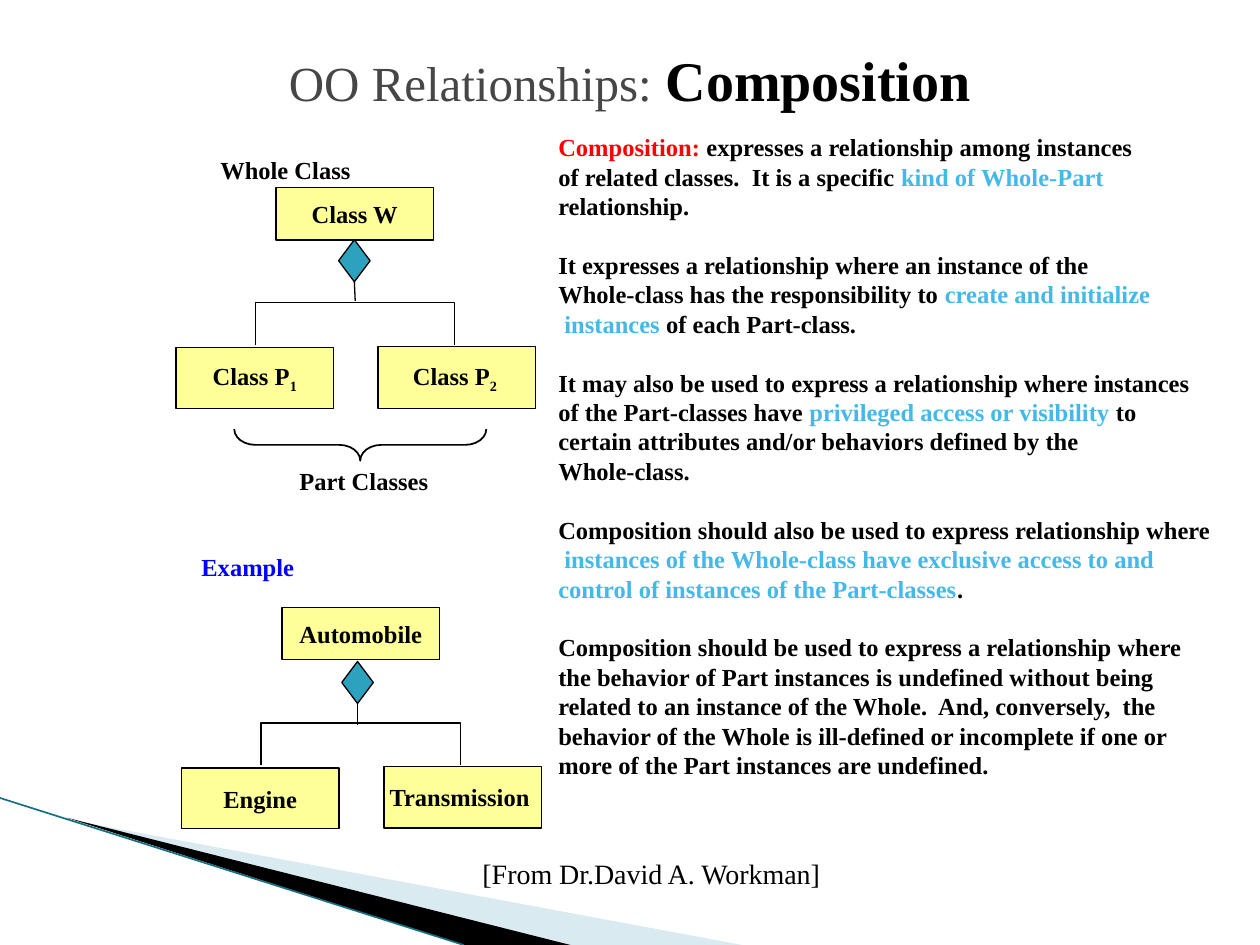
from lxml import etree
from pptx import Presentation
from pptx.dml.color import RGBColor
from pptx.enum.shapes import MSO_CONNECTOR, MSO_SHAPE
from pptx.enum.text import MSO_ANCHOR, MSO_AUTO_SIZE, PP_ALIGN
from pptx.oxml.ns import qn
from pptx.util import Pt

RECT, DIAMOND, BRACE = MSO_SHAPE.RECTANGLE, MSO_SHAPE.DIAMOND, MSO_SHAPE.LEFT_BRACE
STRAIGHT = MSO_CONNECTOR.STRAIGHT
LEFT, CENTER = PP_ALIGN.LEFT, PP_ALIGN.CENTER
TOP, MIDDLE = MSO_ANCHOR.TOP, MSO_ANCHOR.MIDDLE
NO_FIT = MSO_AUTO_SIZE.NONE

FONT = "Times New Roman"
BLACK, GREY, RED, BLUE, SKY = "000000", "464646", "FF0000", "0000FF", "44B9E8"
YELLOW, TEAL, PALE, EDGE = "FFFF99", "2DA2BF", "A0CBDC", "186F84"
BOLD = {"size": 14, "bold": True}

TITLE = [
    ("OO Relationships:", {"size": 28, "color": GREY}),
    (" ", {"size": 32, "color": GREY}),
    ("Composition", {"size": 32, "bold": True}),
]
BODY = [
    [("Composition: ", RED),
     ("expresses a relationship among instances\nof related classes.  It is a specific ", BLACK),
     ("kind of Whole-Part\n", SKY), ("relationship.", BLACK)],
    [("It expresses a relationship where an instance of the\n"
      "Whole-class has the responsibility to ", BLACK),
     ("create and initialize\n instances", SKY), (" of each Part-class.", BLACK)],
    [("It may also be used to express a relationship where instances\n"
      "of the Part-classes have ", BLACK),
     ("privileged access or visibility", SKY),
     (" to\ncertain attributes and/or behaviors defined by the\nWhole-class.", BLACK)],
    [("Composition should also be used to express relationship where\n ", BLACK),
     ("instances of the Whole-class have exclusive access to and\n"
      "control of instances of the Part-classes", SKY), (".", BLACK)],
    [("Composition should be used to express a relationship where\n"
      "the behavior of Part instances is undefined without being\n"
      "related to an instance of the Whole.  And, conversely,  the\n"
      "behavior of the Whole is ill-defined or incomplete if one or\n"
      "more of the Part instances are undefined.", BLACK)],
]
DIAGRAMS = [
    {"boxes": [("Class W", "", (157.7, 107.2, 90, 30)),
               ("Class P", "1", (100.6, 198.7, 90, 34.6)),
               ("Class P", "2 ", (216, 198, 90, 35.3))],
     "bracket": (146, 173), "diamond": (193.5, 137), "stem_end": (203, 172)},
    {"boxes": [("Automobile", "", (161.2, 347, 90, 30)),
               ("Engine", "", (103.7, 438.9, 90, 34.6)),
               ("Transmission ", "", (219.4, 437.8, 90, 35.3))],
     "bracket": (149.2, 413.2), "diamond": (195.3, 378), "stem_end": (204.3, 414)},
]
BRACKET_W, BRACKET_H = 113.8, 24
DIAMOND_W, DIAMOND_H = 18, 24
LABELS = [
    ("Whole Class", BOLD, (118.8, 85, 94, 24)),
    ("Part Classes", BOLD, (164, 263, 94, 24)),
    ("Example", {**BOLD, "color": BLUE}, (108, 311.8, 74, 24)),
    ("[From Dr.David A. Workman]", {"size": 16}, (268.6, 486, 214, 26.6)),
]
WEDGES = [
    ([(39.6, 468.5), (424, 540), (325, 540)], PALE, 40),
    ([(38.2, 467.3), (326, 540), (265, 540)], BLACK, None),
]


def rgb(value):
    """Turn a hex string into a colour."""
    return RGBColor.from_string(value)


def write(p, runs):
    """Add formatted runs to a paragraph, breaking lines at newlines."""
    for text, fmt in runs:
        for i, part in enumerate(text.split("\n")):
            if i:
                p.add_line_break()
            if not part:
                continue
            r = p.add_run()
            r.text = part
            r.font.name = FONT
            r.font.size = Pt(fmt["size"])
            r.font.bold = fmt.get("bold", False)
            r.font.color.rgb = rgb(fmt.get("color", BLACK))
            if "baseline" in fmt:
                r._r.get_or_add_rPr().set("baseline", str(fmt["baseline"]))


def style(sp, fill=None, line=None, width=0.75):
    """Set fill and outline and drop the shadow."""
    sp.shadow.inherit = False
    if fill:
        sp.fill.solid()
        sp.fill.fore_color.rgb = rgb(fill)
    else:
        sp.fill.background()
    if line:
        sp.line.color.rgb = rgb(line)
        sp.line.width = Pt(width)
    else:
        sp.line.fill.background()
    return sp


def frame(sp, **fmt):
    """Set text frame values and return the frame."""
    tf = sp.text_frame
    for name, value in fmt.items():
        setattr(tf, name, value)
    return tf


def place(sp, box):
    """Move and size a shape."""
    for name, value in zip(("left", "top", "width", "height"), box):
        setattr(sp, name, Pt(value))


def shape(s, kind, box, **look):
    """Add a preset shape."""
    return style(s.shapes.add_shape(kind, *map(Pt, box)), **look)


def outline(s, points, close, **look):
    """Add a freeform through the points."""
    pts = [(Pt(x), Pt(y)) for x, y in points]
    fb = s.shapes.build_freeform(*pts[0], scale=1.0)
    fb.add_line_segments(pts[1:], close=close)
    return style(fb.convert_to_shape(), **look)


def line(s, start, end, color, width=0.75):
    """Add a straight connector without shadow."""
    cxn = s.shapes.add_connector(STRAIGHT, *map(Pt, (*start, *end)))
    cxn.line.color.rgb = rgb(color)
    cxn.line.width = Pt(width)
    etree.SubElement(cxn._element.spPr, qn("a:effectLst"))
    return cxn


def diagram(s, boxes, bracket, diamond, stem_end):
    """Draw a whole class above its two part classes."""
    for name, sub, box in boxes:
        sp = shape(s, RECT, box, fill=YELLOW, line=BLACK)
        p = frame(sp, word_wrap=False, vertical_anchor=MIDDLE).paragraphs[0]
        p.alignment = CENTER
        write(p, [(name, BOLD), (sub, {**BOLD, "baseline": -25000})])
    x, y = bracket
    right, low = x + BRACKET_W, y + BRACKET_H
    outline(s, [(x, low), (x, y), (right, y), (right, low)], False, line=BLACK)
    x, y = diamond
    gem = shape(s, DIAMOND, (x, y, DIAMOND_W, DIAMOND_H), fill=TEAL, line=BLACK)
    stem = line(s, (x + DIAMOND_W / 2, y + DIAMOND_H), stem_end, BLACK)
    stem.begin_connect(gem, 2)


def main():
    """Build the slide."""
    prs = Presentation()
    prs.slide_width, prs.slide_height = Pt(720), Pt(540)
    s = prs.slides.add_slide(prs.slide_layouts[1])

    for points, color, alpha in WEDGES:
        sp = outline(s, points, True, fill=color)
        if alpha:
            clr = sp._element.spPr.find(".//" + qn("a:srgbClr"))
            etree.SubElement(clr, qn("a:alpha")).set("val", str(alpha * 1000))
    line(s, (0, 456), (265, 540), EDGE, 0.95)

    title, body = s.shapes.title, s.placeholders[1]
    place(title, (54, 24.2, 612, 41.8))
    p = frame(title, auto_size=NO_FIT, vertical_anchor=MIDDLE).paragraphs[0]
    p.alignment = CENTER
    write(p, TITLE)

    place(body, (311.8, 72, 387.4, 375.8))
    tf = frame(body, auto_size=NO_FIT, word_wrap=False, vertical_anchor=TOP)
    for i, runs in enumerate(BODY):
        p = tf.add_paragraph() if i else tf.paragraphs[0]
        pPr = p._p.get_or_add_pPr()
        pPr.set("marL", "0")
        pPr.set("indent", "0")
        etree.SubElement(pPr, qn("a:buNone"))
        fmt = {"alignment": LEFT, "line_spacing": Pt(16.8), "space_before": Pt(16.8 if i else 0)}
        for name, value in fmt.items():
            setattr(p, name, value)
        write(p, [(text, {**BOLD, "color": color}) for text, color in runs])

    for parts in DIAGRAMS:
        diagram(s, **parts)

    brace = shape(s, BRACE, (196.9, 182.2, 18, 144), line=BLACK, width=1)
    brace.rotation = 270
    brace.adjustments[0], brace.adjustments[1] = 0.667, 0.5

    for text, fmt, box in LABELS:
        tf = frame(s.shapes.add_textbox(*map(Pt, box)), word_wrap=True)
        write(tf.paragraphs[0], [(text, fmt)])

    prs.save("out.pptx")


if __name__ == "__main__":
    main()
